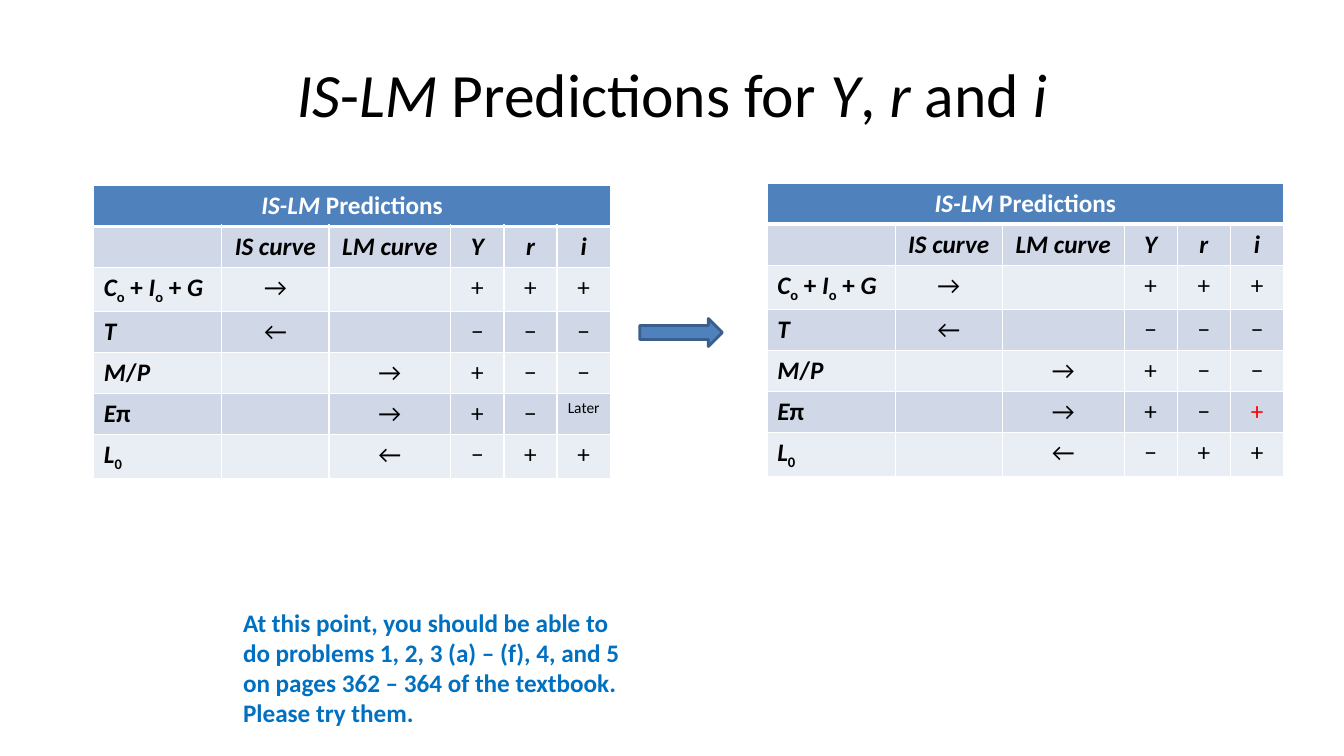
from lxml import etree
from pptx import Presentation
from pptx.dml.color import RGBColor
from pptx.enum import shapes, text
from pptx.oxml import ns
from pptx.util import Pt

BLACK = RGBColor(0, 0, 0)
WHITE = RGBColor(255, 255, 255)
RED = RGBColor(255, 0, 0)
BLUE = RGBColor(0x4F, 0x81, 0xBD)
EDGE = RGBColor(0x3A, 0x5F, 0x8C)
NOTE = RGBColor(0, 0x70, 0xC0)
DARK = RGBColor(0xD0, 0xD8, 0xE8)
LIGHT = RGBColor(0xE9, 0xED, 0xF4)

COLS = [91.5, 76.5, 87, 38, 38, 38]
ROW = 29.2
HEAD = ["*IS-LM* Predictions", "", "", "", "", ""]
NAMES = ["", "*IS curve*", "*LM curve*", "*Y*", "*r*", "*i*"]
MOVES = [
    ["*C*_o_ + *I*_o_ + *G*", "→", "", "+", "+", "+"],
    ["*T*", "←", "", "−", "−", "−"],
    ["*M*/*P*", "", "→", "+", "−", "−"],
    ["*E*π", "", "→", "+", "−", "+"],
    ["*L*_0_", "", "←", "−", "+", "+"],
]
EPI = 5  # table row of the expected inflation shift


class Deck:
    def __init__(self, slide, font="Calibri"):
        self.slide = slide
        self.font = font

    def fill_in(self, para, words, size=18, color=BLACK, bold=False, center=True):
        """Fill a paragraph: *x* is italic, _x_ is subscript."""
        para.alignment = text.PP_ALIGN.CENTER if center else text.PP_ALIGN.LEFT
        for i, part in enumerate(words.split("*")):
            for j, piece in enumerate(part.split("_")):
                if not piece:
                    continue
                run = para.add_run()
                run.text = piece
                font = run.font
                font.name, font.size, font.bold = self.font, Pt(size), bold
                font.italic = i % 2 == 1
                font.color.rgb = color
                if j % 2:
                    run._r.get_or_add_rPr().set("baseline", "-25000")

    def label(self, words, x, y, w, h, middle=False, **style):
        box = self.slide.shapes.add_textbox(Pt(x), Pt(y), Pt(w), Pt(h))
        frame = box.text_frame
        frame.word_wrap = True
        if middle:
            frame.vertical_anchor = text.MSO_ANCHOR.MIDDLE
        self.fill_in(frame.paragraphs[0], words, **style)

    def arrow(self, x, y, w, h):
        kind = shapes.MSO_SHAPE.RIGHT_ARROW
        arrow = self.slide.shapes.add_shape(kind, Pt(x), Pt(y), Pt(w), Pt(h))
        arrow.shadow.inherit = False
        arrow.fill.solid()
        arrow.fill.fore_color.rgb = BLUE
        arrow.line.color.rgb = EDGE
        arrow.line.width = Pt(2)

    def edge(self, cell, side, width):
        props = cell._tc.get_or_add_tcPr()
        line = etree.SubElement(props, ns.qn("a:ln" + side), w=str(Pt(width)))
        fill = etree.SubElement(line, ns.qn("a:solidFill"))
        etree.SubElement(fill, ns.qn("a:srgbClr"), val=str(WHITE))

    def table(self, x, y, last, size=18, color=BLACK):
        """Draw the predictions; last is the reply for i in the Eπ row."""
        rows = [HEAD, NAMES] + MOVES
        frame = self.slide.shapes.add_table(
            len(rows), len(COLS), Pt(x), Pt(y), Pt(sum(COLS)), Pt(ROW * len(rows)))
        grid = frame.table
        for col, width in zip(grid.columns, COLS):
            col.width = Pt(width)
        for r, row in enumerate(rows):
            grid.rows[r].height = Pt(ROW)
            for c, words in enumerate(row):
                cell = grid.cell(r, c)
                for side in "LRTB":
                    thick = (r, side) in [(0, "B"), (1, "T")]
                    self.edge(cell, side, 3 if thick else 1)
                cell.fill.solid()
                cell.fill.fore_color.rgb = BLUE if r == 0 else DARK if r % 2 else LIGHT
                style = {"bold": r < 2 or c == 0, "center": r < 2 or c > 0}
                if r == 0:
                    style["color"] = WHITE
                if (r, c) == (EPI, len(COLS) - 1):
                    words = last
                    style.update(size=size, color=color)
                self.fill_in(cell.text_frame.paragraphs[0], words, **style)
        grid.cell(0, 0).merge(grid.cell(0, len(COLS) - 1))


def main():
    show = Presentation()
    show.slide_width, show.slide_height = Pt(960), Pt(540)
    deck = Deck(show.slides.add_slide(show.slide_layouts[6]))
    deck.label("*IS*-*LM* Predictions for *Y*, *r* and *i*",
               48, 21.6, 864, 90, middle=True, size=44)
    deck.arrow(457, 227.5, 59, 20)
    deck.table(548, 131, "+", color=RED)
    deck.table(67, 132.5, "Later", size=11)
    deck.label("At this point, you should be able to do problems 1, 2, 3 (a) – (f), 4, "
               "and 5 on pages 362 – 364 of the textbook. Please try them.",
               166.5, 430, 289.5, 94.5, color=NOTE, bold=True, center=False)
    show.save("out.pptx")


if __name__ == "__main__":
    main()
